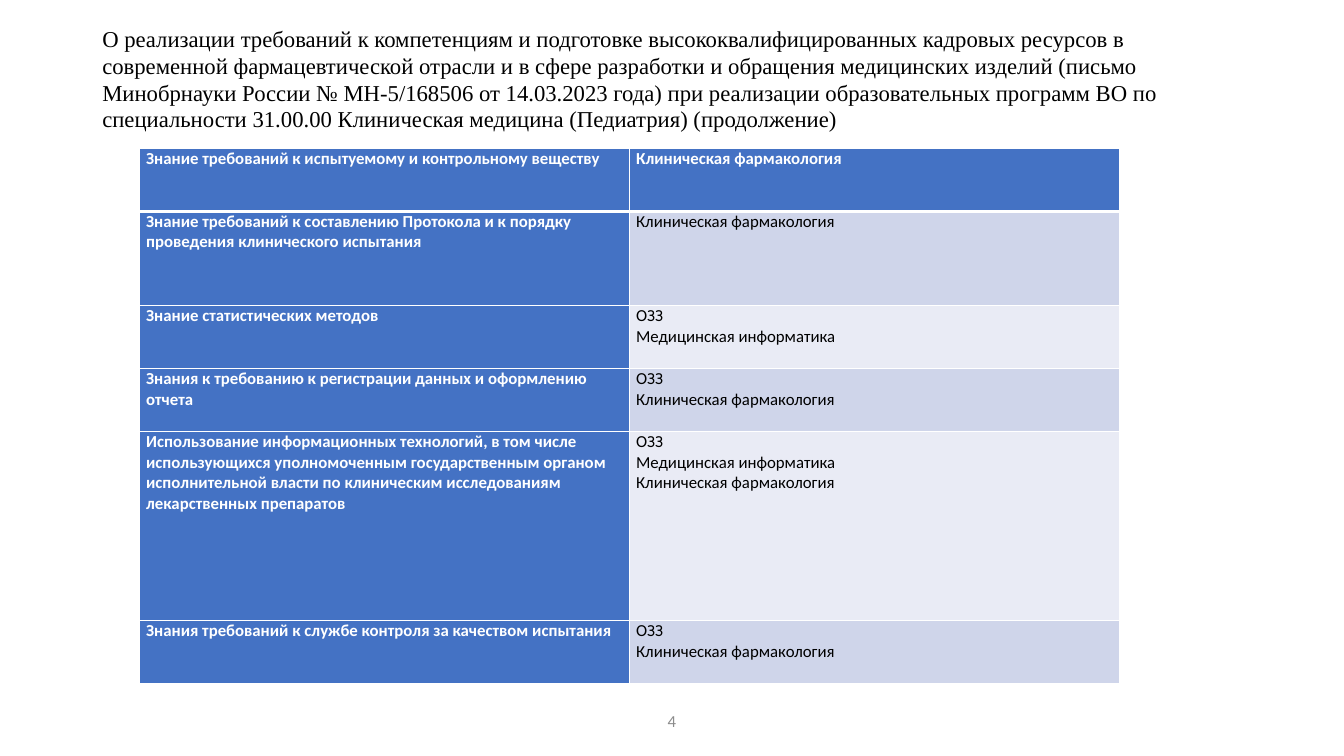
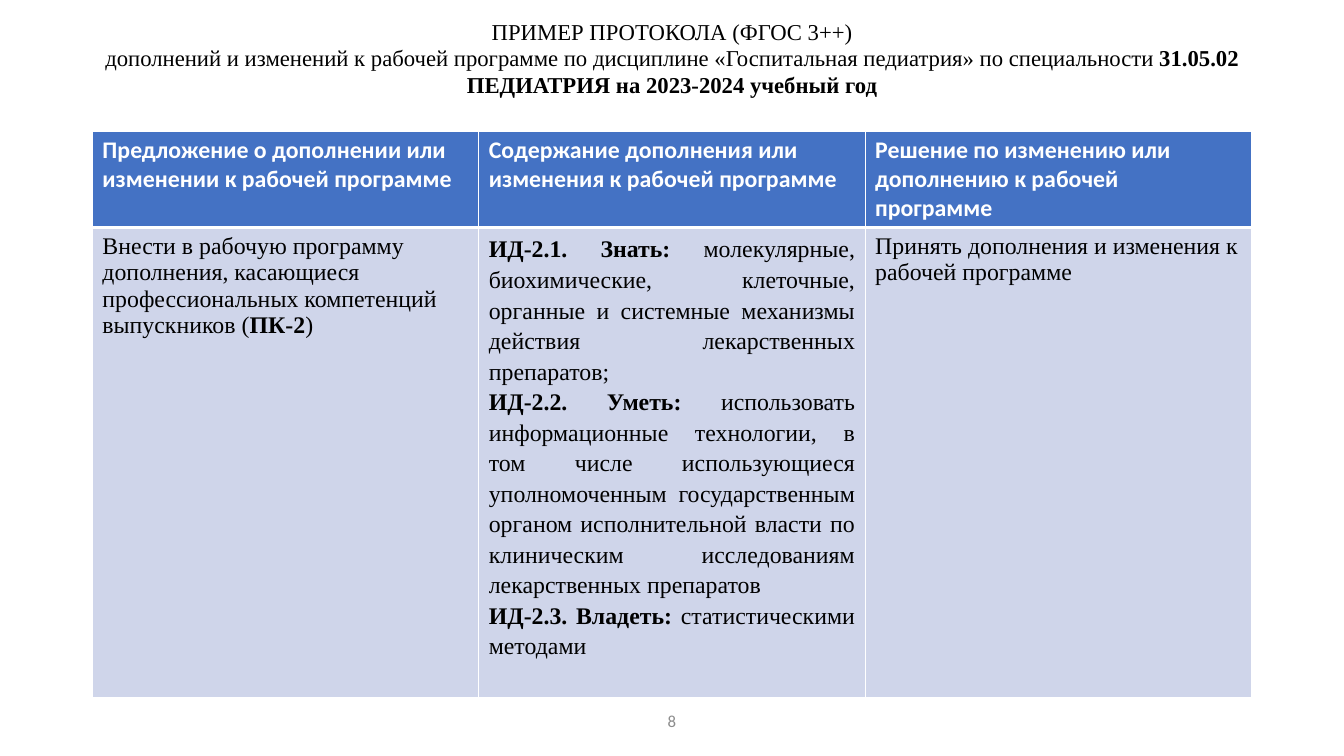
"""Build two slides on curriculum requirements with native tables."""
from pptx import Presentation
from pptx.dml.color import RGBColor
from pptx.enum.text import MSO_ANCHOR, PP_ALIGN
from pptx.oxml import parse_xml
from pptx.oxml.ns import nsdecls
from pptx.util import Pt

BLACK = RGBColor(0x00, 0x00, 0x00)
WHITE = RGBColor(0xFF, 0xFF, 0xFF)
GRAY = RGBColor(0x8C, 0x8C, 0x8C)
BLUE = RGBColor(0x44, 0x72, 0xC4)
BANDS = (RGBColor(0xCF, 0xD5, 0xEA), RGBColor(0xE9, 0xEB, 0xF5))
SANS, SERIF = "Calibri", "Times New Roman"


def write(tf, text, size=12, font=SANS, color=BLACK, bold=False,
          align=PP_ALIGN.LEFT, spacing=1.0):
    for i, line in enumerate(text.split("\n")):
        p = tf.paragraphs[0] if i == 0 else tf.add_paragraph()
        p.alignment = align
        p.line_spacing = spacing
        for j, part in enumerate(line.split("*")):
            if part:
                r = p.add_run()
                r.text = part
                r.font.size = Pt(size)
                r.font.name = font
                r.font.color.rgb = color
                r.font.bold = bold or j % 2 == 1


def set_borders(cell, top, bottom):
    tcPr = cell._tc.get_or_add_tcPr()
    widths = {"lnL": 1, "lnR": 1, "lnT": top, "lnB": bottom}
    for i, (tag, width) in enumerate(widths.items()):
        tcPr.insert(i, parse_xml(
            f'<a:{tag} {nsdecls("a")} w="{Pt(width)}"><a:solidFill>'
            f'<a:srgbClr val="{WHITE}"/></a:solidFill></a:{tag}>'))


class Deck:
    def __init__(self):
        self.prs = Presentation()
        self.prs.slide_width, self.prs.slide_height = Pt(960), Pt(540)
        self.slide = None

    def add_slide(self, number):
        self.slide = self.prs.slides.add_slide(self.prs.slide_layouts[6])
        self.add_text(str(number), 318, 500, 324, 29,
                      color=GRAY, align=PP_ALIGN.CENTER)

    def add_text(self, text, left, top, width, height, **fmt):
        sp = self.slide.shapes.add_textbox(Pt(left), Pt(top), Pt(width), Pt(height))
        tf = sp.text_frame
        tf.word_wrap = True
        tf.vertical_anchor = MSO_ANCHOR.MIDDLE
        write(tf, text, **fmt)

    def add_title(self, text, top, height, align=PP_ALIGN.LEFT):
        self.add_text(text, 66, top, 828, height, size=16.2, font=SERIF,
                      align=align, spacing=0.98)

    def add_table(self, rows, left, top, col_width, heights, size,
                  first_col=False, margins=None, formats=None):
        cols = len(rows[0])
        table = self.slide.shapes.add_table(
            len(rows), cols, Pt(left), Pt(top),
            Pt(col_width * cols), Pt(sum(heights))).table
        table.first_col = first_col
        for col in table.columns:
            col.width = Pt(col_width)
        for i, (row, height) in enumerate(zip(rows, heights)):
            table.rows[i].height = Pt(height)
            for j, text in enumerate(row):
                cell = table.cell(i, j)
                head = i == 0 or (first_col and j == 0)
                cell.fill.solid()
                cell.fill.fore_color.rgb = BLUE if head else BANDS[(i - 1) % 2]
                set_borders(cell, 3 if i == 1 else 1, 3 if i == 0 else 1)
                if margins:
                    cell.margin_left = cell.margin_right = Pt(margins[0])
                    cell.margin_top = cell.margin_bottom = Pt(margins[1])
                fmt = {"color": WHITE, "bold": True} if head else (formats or {}).get(j, {})
                write(cell.text_frame, text, size=size, **fmt)


def build_competences(deck):
    deck.add_slide(4)
    deck.add_title(
        "О реализации требований к компетенциям и подготовке высококвалифицированных "
        "кадровых ресурсов в современной фармацевтической отрасли и в сфере разработки "
        "и обращения медицинских изделий (письмо Минобрнауки России № МН-5/168506 от "
        "14.03.2023 года) при реализации образовательных программ ВО по специальности "
        "31.00.00 Клиническая медицина (Педиатрия) (продолжение)", 21, 72)
    rows = [
        ("Знание требований к испытуемому и контрольному веществу",
         "Клиническая фармакология"),
        ("Знание требований к составлению Протокола и к порядку проведения "
         "клинического испытания", "Клиническая фармакология"),
        ("Знание статистических методов", "ОЗЗ\nМедицинская информатика"),
        ("Знания к требованию к регистрации данных и оформлению отчета",
         "ОЗЗ\nКлиническая фармакология"),
        ("Использование информационных технологий, в том числе использующихся "
         "уполномоченным государственным органом исполнительной власти по клиническим "
         "исследованиям лекарственных препаратов",
         "ОЗЗ\nМедицинская информатика\nКлиническая фармакология"),
        ("Знания требований к службе контроля за качеством испытания",
         "ОЗЗ\nКлиническая фармакология"),
    ]
    deck.add_table(rows, 99.4, 106, 350, (45, 67.5, 45, 45, 135, 45), 12,
                   first_col=True, margins=(5, 0))


def build_protocol(deck):
    deck.add_slide(8)
    deck.add_title(
        "ПРИМЕР ПРОТОКОЛА (ФГОС 3++)\n"
        "дополнений и изменений к рабочей программе по дисциплине «Госпитальная "
        "педиатрия» по специальности *31.05.02 ПЕДИАТРИЯ на 2023-2024 учебный год*",
        12, 60, align=PP_ALIGN.CENTER)
    rows = [
        ("Предложение о дополнении или изменении к рабочей программе",
         "Содержание дополнения или изменения к рабочей программе",
         "Решение по изменению или дополнению к рабочей программе"),
        ("Внести в рабочую программу дополнения, касающиеся профессиональных "
         "компетенций выпускников (*ПК-2*)",
         "*ИД-2.1. Знать:* молекулярные, биохимические, клеточные, органные и "
         "системные механизмы действия лекарственных препаратов;\n"
         "*ИД-2.2. Уметь:* использовать информационные технологии, в том числе "
         "использующиеся уполномоченным государственным органом исполнительной власти "
         "по клиническим исследованиям лекарственных препаратов\n"
         "*ИД-2.3. Владеть:* статистическими методами",
         "Принять дополнения и изменения к рабочей программе"),
    ]
    plain = {"font": SERIF}
    justified = {"font": SERIF, "align": PP_ALIGN.JUSTIFY, "spacing": 1.15}
    deck.add_table(rows, 66, 93.6, 276, (69, 333), 17,
                   formats={0: plain, 1: justified, 2: plain})


def main():
    deck = Deck()
    build_competences(deck)
    build_protocol(deck)
    deck.prs.save("out.pptx")


if __name__ == "__main__":
    main()
